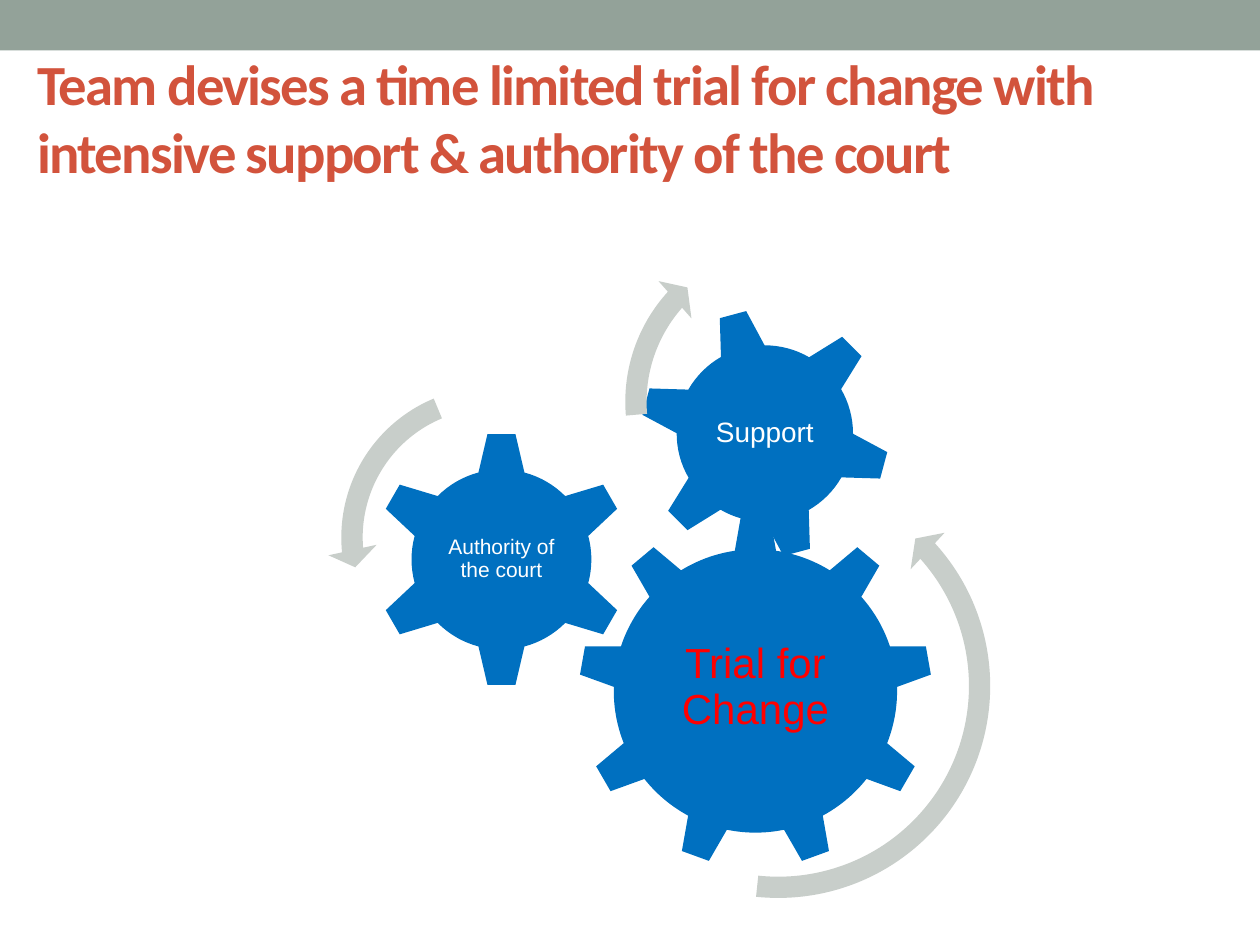
from pptx import Presentation
from pptx.dml.color import RGBColor
from pptx.enum.shapes import MSO_SHAPE
from pptx.enum.text import MSO_ANCHOR, MSO_AUTO_SIZE, PP_ALIGN
from pptx.util import Cm, Pt

RECTANGLE = MSO_SHAPE.RECTANGLE
GEAR_6, GEAR_9 = MSO_SHAPE.GEAR_6, MSO_SHAPE.GEAR_9
CLOCKWISE, ANTICLOCKWISE = MSO_SHAPE.CIRCULAR_ARROW, MSO_SHAPE.LEFT_CIRCULAR_ARROW
MIDDLE, LEFT, CENTER = MSO_ANCHOR.MIDDLE, PP_ALIGN.LEFT, PP_ALIGN.CENTER

BANNER, TITLE, GEAR, ARROW = "93A299", "D2533C", "0070C0", "C8CECA"
RED, WHITE = "FF0000", "FFFFFF"

TITLE_TEXT = ("Team devises a time limited trial for change with "
              "intensive support & authority of the court")

# label, shape, left, top, size, rotation, label width, label height, lift, inset, font size, colour
GEARS = [
    ("Trial for Change", GEAR_9, 11.66, 10.36, 7.14, 0, 4.27, 3.66, 0.06, 0.08, 24, RED),
    ("Authority of the court", GEAR_6, 7.52, 8.69, 5.18, 0, 2.57, 2.57, 0, 0.05, 12, WHITE),
    ("Support", GEAR_6, 12.88, 6.2, 5.08, 345, 2.84, 2.84, 0, 0.05, 16, WHITE),
]

# shape, left, top, size, flipped, band width, (head, end, start angles in degrees), head width
ARROWS = [
    (CLOCKWISE, 11.13, 9.27, 9.12, True, 0.047, (4.98, 42.11, 263.99), 0.055),
    (ANTICLOCKWISE, 6.6, 7.52, 6.63, False, 0.065, (7.17, 174.82, 247.3), 0.075),
    (CLOCKWISE, 12.32, 4.52, 7.16, False, 0.06, (6.57, 221.9, 175.14), 0.07),
]
DEGREE = 0.6  # adjustment units per degree


def color(hex_string):
    return RGBColor.from_string(hex_string)


def add_filled_shape(slide, kind, left, top, width, height, fill):
    shape = slide.shapes.add_shape(kind, Cm(left), Cm(top), Cm(width), Cm(height))
    shape.shadow.inherit = False
    shape.fill.solid()
    shape.fill.fore_color.rgb = color(fill)
    shape.line.fill.background()
    return shape


def format_paragraph(paragraph, font_name, size, hex_string, alignment):
    paragraph.alignment = alignment
    paragraph.font.name = font_name
    paragraph.font.size = Pt(size)
    paragraph.font.color.rgb = color(hex_string)


def add_title(slide):
    title = slide.shapes.title
    title.left, title.top, title.width, title.height = Cm(0.5), Cm(0.76), Cm(24.4), Cm(3.18)
    frame = title.text_frame
    frame.text = TITLE_TEXT
    frame.auto_size = MSO_AUTO_SIZE.NONE
    frame.vertical_anchor = MIDDLE
    paragraph = frame.paragraphs[0]
    format_paragraph(paragraph, "Calibri", 32.4, TITLE, LEFT)
    paragraph.font.bold = True
    paragraph.runs[0].font._element.set("spc", "-100")


def add_gear(slide, label, kind, left, top, size, rotation, width, height, lift, inset,
             font_size, text_color):
    """Draw a gear with an upright label centred on it."""
    gear = add_filled_shape(slide, kind, left, top, size, size, GEAR)
    gear.rotation = rotation
    box = slide.shapes.add_textbox(Cm(left + (size - width) / 2),
                                   Cm(top + (size - height) / 2 - lift),
                                   Cm(width), Cm(height))
    frame = box.text_frame
    frame.word_wrap = True
    frame.vertical_anchor = MIDDLE
    frame.margin_left = frame.margin_right = Cm(inset)
    frame.margin_top = frame.margin_bottom = Cm(inset)
    frame.text = label
    paragraph = frame.paragraphs[0]
    format_paragraph(paragraph, "Arial", font_size, text_color, CENTER)
    paragraph.line_spacing = 0.9


def add_turn_arrow(slide, kind, left, top, size, flipped, band, angles, head):
    arrow = add_filled_shape(slide, kind, left, top, size, size, ARROW)
    values = [band, *(angle * DEGREE for angle in angles), head]
    for index, value in enumerate(values):
        arrow.adjustments[index] = value
    if flipped:
        arrow._element.spPr.xfrm.set("flipV", "1")


def main():
    presentation = Presentation()
    presentation.slide_width, presentation.slide_height = Cm(25.4), Cm(19.05)
    slide = presentation.slides.add_slide(presentation.slide_layouts[5])
    add_filled_shape(slide, RECTANGLE, 0, 0, 25.4, 1.02, BANNER)
    add_title(slide)
    for gear in GEARS:
        add_gear(slide, *gear)
    for arrow in ARROWS:
        add_turn_arrow(slide, *arrow)
    presentation.save("out.pptx")


if __name__ == "__main__":
    main()
